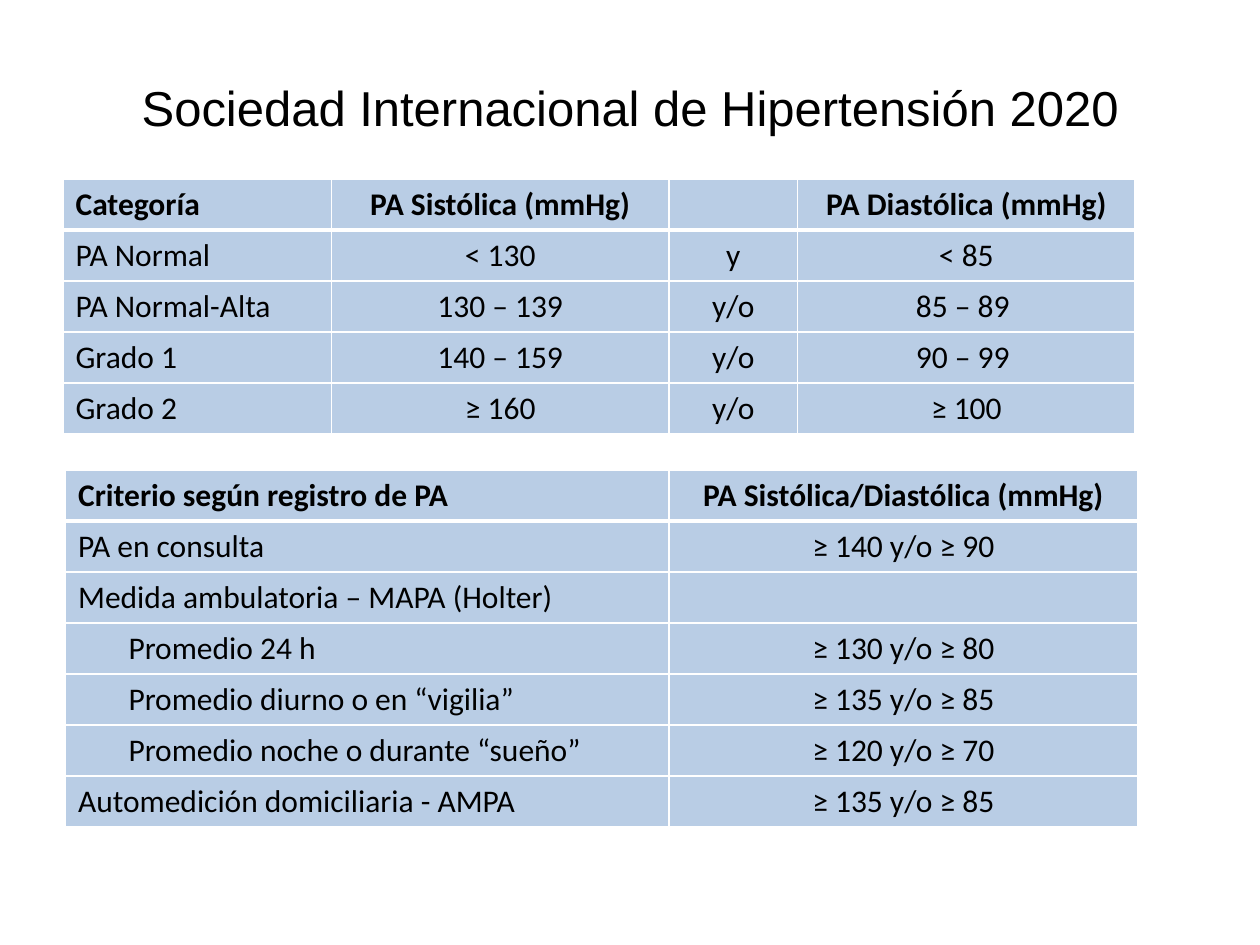
from lxml import etree
from pptx import Presentation
from pptx.dml.color import RGBColor
from pptx.enum.text import MSO_ANCHOR, PP_ALIGN
from pptx.oxml.ns import qn
from pptx.util import Inches, Pt

COLORS = {"text": "000000", "cell": "B9CDE5", "border": "FFFFFF", "background": "FFFFFF"}
ROW_HEIGHT = 0.405
INDENT = 0.4

CATEGORIES = [
    ["Categoría", "PA Sistólica (mmHg)", "", "PA Diastólica (mmHg)"],
    ["PA Normal", "< 130", "y", "< 85"],
    ["PA Normal-Alta", "130 – 139", "y/o", "85 – 89 "],
    ["Grado 1", "140 – 159", "y/o", "90 – 99 "],
    ["Grado 2", "≥ 160", "y/o", "≥ 100"],
]
CRITERIA = [
    ["Criterio según registro de PA", "PA Sistólica/Diastólica (mmHg)"],
    ["PA en consulta", "≥ 140 y/o ≥ 90"],
    ["Medida ambulatoria – MAPA (Holter)", ""],
    ["Promedio 24 h", "≥ 130 y/o ≥ 80"],
    ["Promedio diurno o en “vigilia”", "≥ 135 y/o ≥ 85"],
    ["Promedio noche o durante “sueño”", "≥ 120 y/o ≥ 70"],
    ["Automedición domiciliaria - AMPA", "≥ 135 y/o ≥ 85"],
]


def color(name):
    return RGBColor.from_string(COLORS[name])


def format_paragraph(paragraph, font_name, size, bold=False):
    for run in paragraph.runs:
        run.font.name = font_name
        run.font.size = Pt(size)
        run.font.bold = bold
        run.font.color.rgb = color("text")


def set_borders(cell, top, bottom):
    """Draw the four cell borders; top and bottom are widths in points."""
    properties = cell._tc.get_or_add_tcPr()
    for position, (side, width) in enumerate(
        [("lnL", 1), ("lnR", 1), ("lnT", top), ("lnB", bottom)]
    ):
        line = etree.Element(qn(f"a:{side}"), w=str(Pt(width)))
        fill = etree.SubElement(line, qn("a:solidFill"))
        etree.SubElement(fill, qn("a:srgbClr"), val=COLORS["border"])
        properties.insert(position, line)


def add_title(slide, box, text):
    shape = slide.shapes.add_textbox(*map(Inches, box))
    frame = shape.text_frame
    frame.word_wrap = True
    frame.vertical_anchor = MSO_ANCHOR.MIDDLE
    frame.text = text
    paragraph = frame.paragraphs[0]
    paragraph.alignment = PP_ALIGN.CENTER
    format_paragraph(paragraph, "Arial", 28)


def add_pressure_table(slide, left, top, widths, rows, indented=()):
    shape = slide.shapes.add_table(
        len(rows), len(widths), Inches(left), Inches(top),
        Inches(sum(widths)), Inches(ROW_HEIGHT * len(rows)),
    )
    table = shape.table
    for column, width in zip(table.columns, widths):
        column.width = Inches(width)

    for row_index, row in enumerate(rows):
        table.rows[row_index].height = Inches(ROW_HEIGHT)
        is_header = row_index == 0
        for column_index, text in enumerate(row):
            cell = table.cell(row_index, column_index)
            cell.fill.solid()
            cell.fill.fore_color.rgb = color("cell")
            set_borders(cell, 3 if row_index == 1 else 1, 3 if is_header else 1)
            cell.text_frame.text = text
            paragraph = cell.text_frame.paragraphs[0]
            format_paragraph(paragraph, "Calibri", 18, is_header)
            if column_index > 0:
                paragraph.alignment = PP_ALIGN.CENTER
            elif row_index in indented:
                paragraph._p.get_or_add_pPr().set("marL", str(Inches(INDENT)))


def main():
    presentation = Presentation()
    presentation.slide_width, presentation.slide_height = Inches(10), Inches(7.5)
    slide = presentation.slides.add_slide(presentation.slide_layouts[6])
    slide.background.fill.solid()
    slide.background.fill.fore_color.rgb = color("background")

    # Title
    add_title(slide, (0.5, 0.3, 9, 1.09), "Sociedad Internacional de Hipertensión 2020")
    # Blood pressure categories
    add_pressure_table(slide, 0.5, 1.42, [2.13, 2.68, 1.02, 2.68], CATEGORIES)
    # Criteria by type of measurement
    add_pressure_table(slide, 0.52, 3.73, [4.79, 3.72], CRITERIA, indented=(3, 4, 5))

    presentation.save("out.pptx")


if __name__ == "__main__":
    main()
